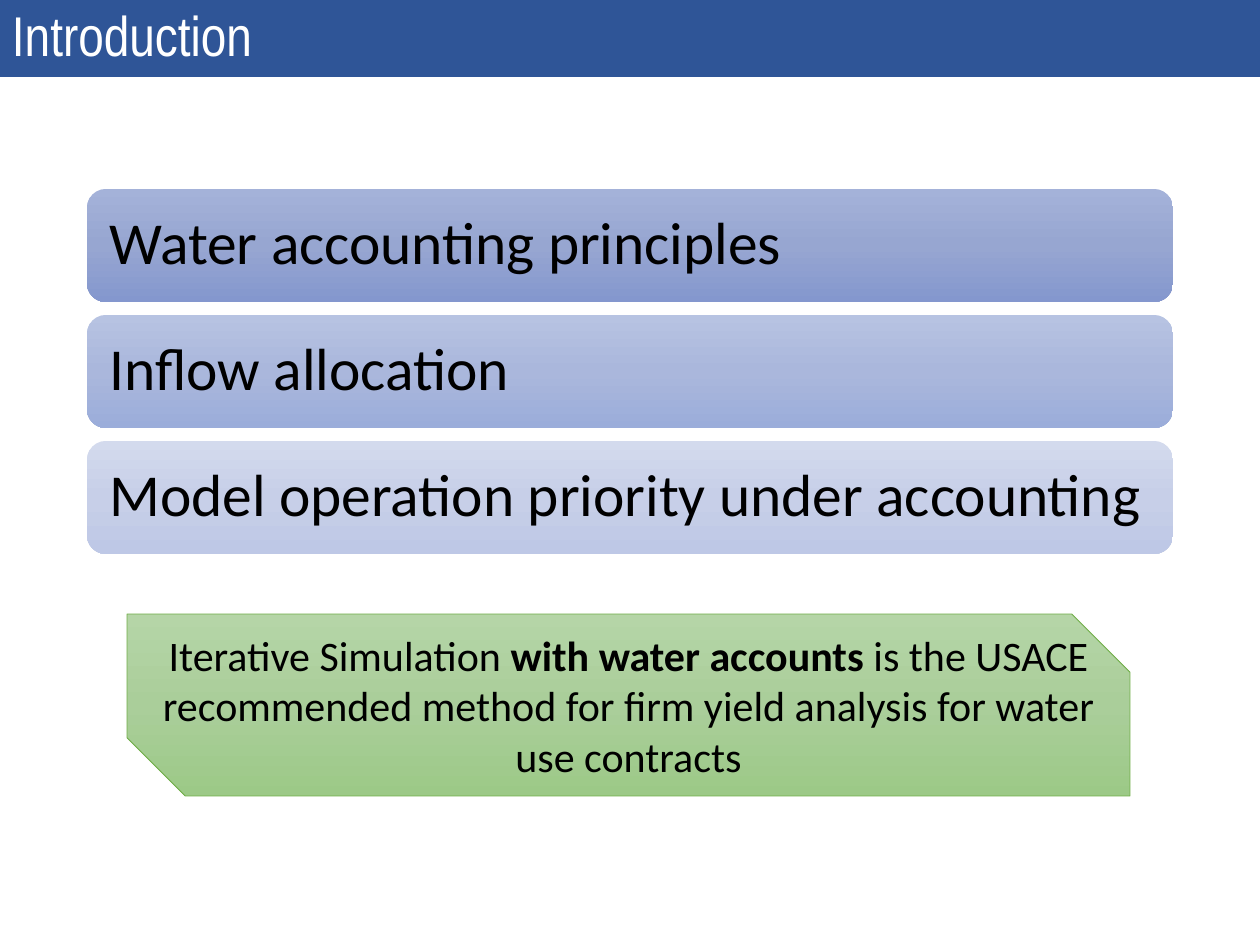
from copy import deepcopy

from pptx import Presentation
from pptx.dml.color import RGBColor
from pptx.enum.shapes import MSO_SHAPE
from pptx.enum.text import MSO_ANCHOR, PP_ALIGN
from pptx.oxml.ns import qn
from pptx.util import Emu, Pt

PX_PER_INCH = 126
TOPICS = [
    ("Water accounting principles", ("A4B2D9", "97A6D1", "8497CE")),
    ("Inflow allocation", ("B7C3E2", "AAB7DC", "9BADDA")),
    ("Model operation priority under accounting", ("D3DAED", "C7CFE8", "BEC8E6")),
]
TOPIC_TOP, TOPIC_STEP = 189, 126
METHOD_RUNS = [
    ("Iterative Simulation ", False),
    ("with water accounts ", True),
    ("is the USACE recommended method for firm yield analysis for water use contracts", False),
]


def px(n):
    return Emu(round(n * 914400 / PX_PER_INCH))


def color(hex_string):
    return RGBColor.from_string(hex_string)


def add_box(slide, kind, left, top, width, height):
    s = slide.shapes.add_shape(kind, px(left), px(top), px(width), px(height))
    s.shadow.inherit = False
    s.line.fill.background()
    return s


def fill_gradient(s, colors):
    """Fill from top to bottom with three evenly spaced colours."""
    s.fill.gradient()
    s.fill.gradient_angle = 270
    stops = s._element.spPr.find(".//" + qn("a:gsLst"))
    stops.insert(1, deepcopy(stops[0]))
    for i, (stop, c) in enumerate(zip(s.fill.gradient_stops, colors)):
        stop.position = i / 2
        stop.color.rgb = color(c)


def set_text(s, runs, font, size, text_color, inset, align=PP_ALIGN.LEFT, spacing=None):
    """Write one paragraph from (text, bold) runs."""
    tf = s.text_frame
    tf.word_wrap = True
    tf.vertical_anchor = MSO_ANCHOR.MIDDLE
    tf.margin_left = tf.margin_right = px(inset)
    tf.margin_top = tf.margin_bottom = 0
    p = tf.paragraphs[0]
    p.alignment = align
    p.line_spacing = spacing
    p.font.name = font
    p.font.size = Pt(size)
    p.font.color.rgb = color(text_color)
    for text, bold in runs:
        r = p.add_run()
        r.text = text
        if bold:
            r.font.bold = True


def add_title(slide):
    s = add_box(slide, MSO_SHAPE.RECTANGLE, 0, 0, 1260, 77)
    s.fill.solid()
    s.fill.fore_color.rgb = color("2F5597")
    set_text(s, [("Introduction", False)], "Arial Narrow", 32, "FFFFFF", 12, spacing=0.9)


def add_topic(slide, top, text, colors):
    s = add_box(slide, MSO_SHAPE.ROUNDED_RECTANGLE, 87, top, 1086, 113)
    fill_gradient(s, colors)
    set_text(s, [(text, False)], "Calibri", 34, "000000", 17, spacing=0.9)


def add_method_note(slide):
    s = add_box(slide, MSO_SHAPE.SNIP_2_DIAG_RECTANGLE, 127, 614, 1003, 182)
    s.adjustments[0] = 0
    s.adjustments[1] = 0.32
    fill_gradient(s, ("B5D5A7", "AACE9A", "9CC987"))
    s.line.color.rgb = color("70AD47")
    s.line.width = Pt(0.5)
    set_text(s, METHOD_RUNS, "Calibri", 24, "000000", 0, PP_ALIGN.CENTER)


def main():
    prs = Presentation()
    prs.slide_width, prs.slide_height = px(1260), px(945)
    slide = prs.slides.add_slide(prs.slide_layouts[6])
    add_title(slide)
    for i, (text, colors) in enumerate(TOPICS):
        add_topic(slide, TOPIC_TOP + i * TOPIC_STEP, text, colors)
    add_method_note(slide)
    prs.save("out.pptx")


if __name__ == "__main__":
    main()
